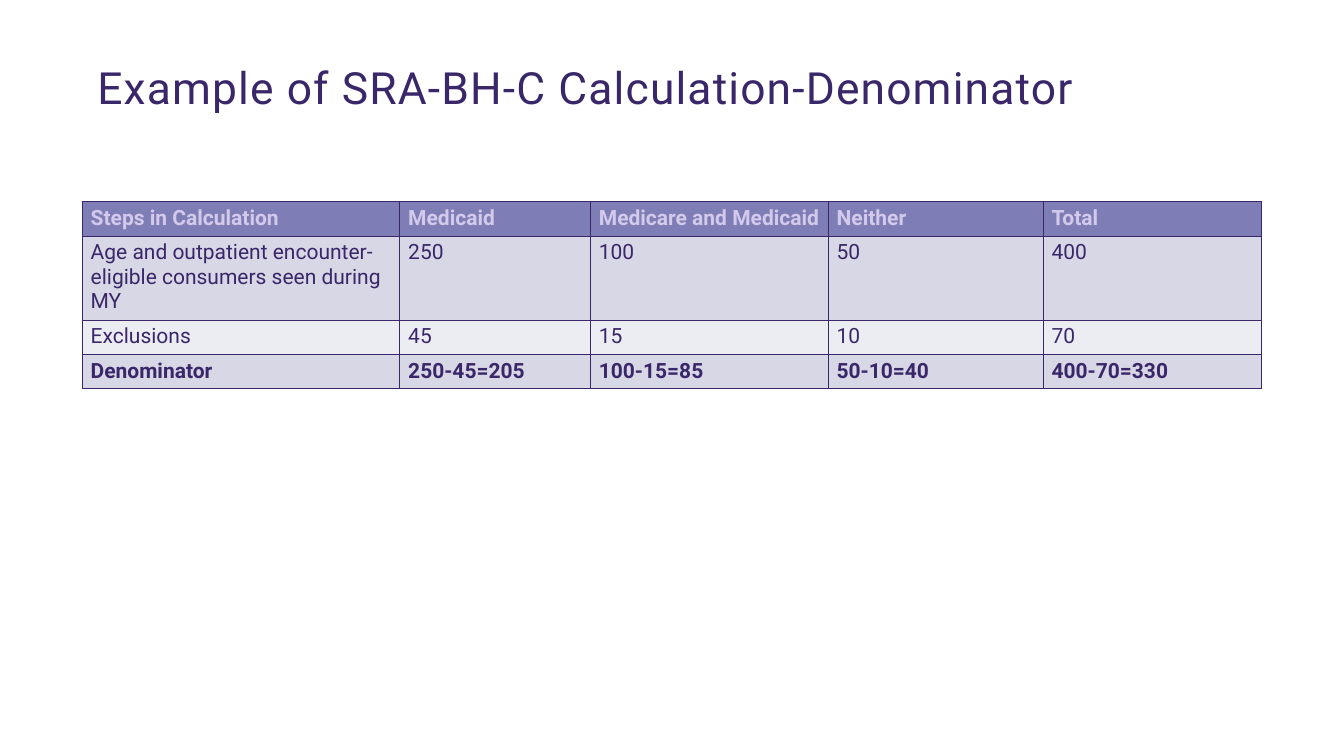
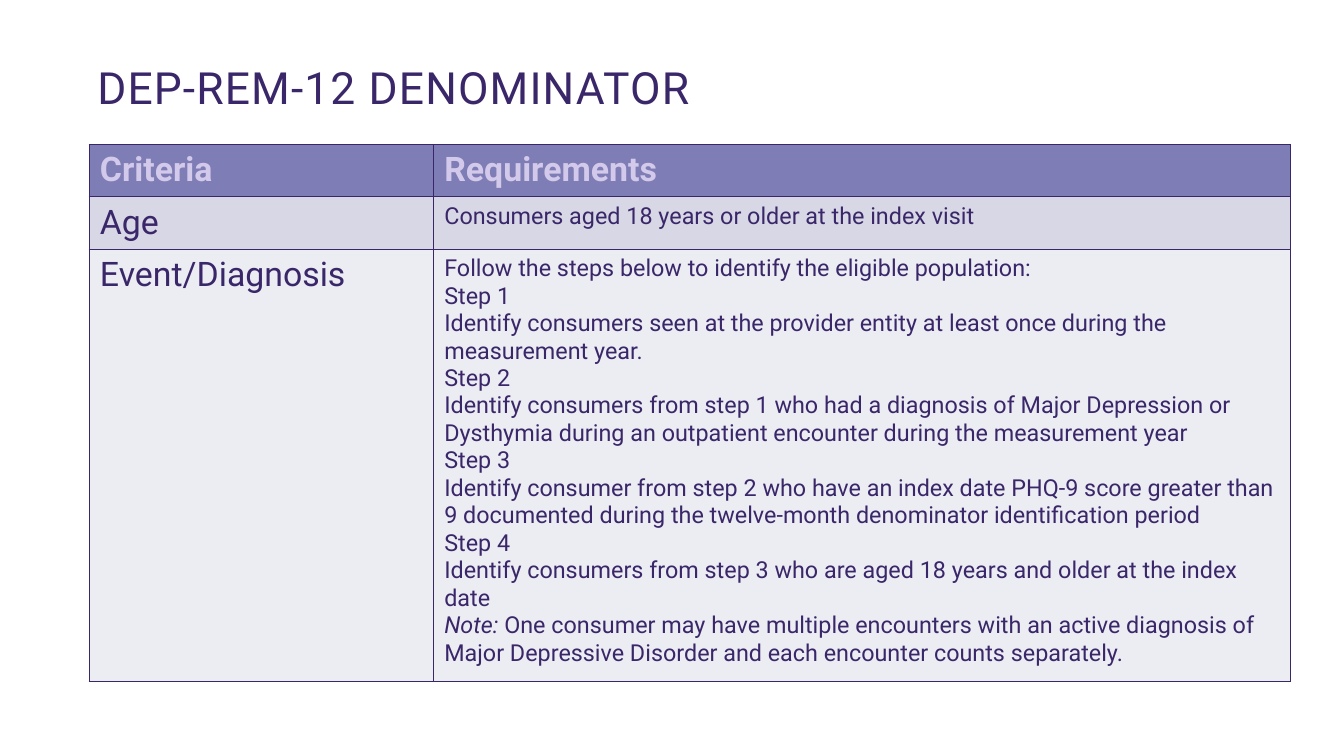
from dataclasses import dataclass

from lxml.etree import SubElement
from pptx import Presentation
from pptx.dml.color import RGBColor
from pptx.oxml.ns import qn
from pptx.slide import Slide
from pptx.table import _Cell as Cell
from pptx.util import Inches, Pt

FONT = "Roboto"
PURPLE = RGBColor(0x3A, 0x27, 0x69)
LILAC = RGBColor(0xD3, 0xCA, 0xEB)
HEADER_FILL = RGBColor(0x7E, 0x7D, 0xB5)
BAND_FILLS = (RGBColor(0xD8, 0xD7, 0xE5), RGBColor(0xEC, 0xEC, 0xF3))
NOTE_LABEL = "Note:"


@dataclass(frozen=True)
class TableSlide:
    title: str
    left: float
    top: float
    col_widths: tuple[float, ...]
    row_heights: tuple[float, ...]
    rows: tuple[tuple[str, ...], ...]
    label_size: int
    body_size: int
    margin_x: float
    margin_y: float
    bold_last_row: bool = False


SLIDES = (
    TableSlide(
        title="Example of SRA-BH-C Calculation-Denominator",
        left=0.98,
        top=2.4,
        col_widths=(3.78, 2.27, 2.83, 2.56, 2.6),
        row_heights=(0.41, 0.97, 0.41, 0.41),
        rows=(
            ("Steps in Calculation", "Medicaid", "Medicare and Medicaid", "Neither", "Total"),
            ("Age and outpatient encounter-eligible consumers seen during MY",
             "250", "100", "50", "400"),
            ("Exclusions", "45", "15", "10", "70"),
            ("Denominator", "250-45=205", "100-15=85", "50-10=40", "400-70=330"),
        ),
        label_size=18,
        body_size=18,
        margin_x=0.1,
        margin_y=0.05,
        bold_last_row=True,
    ),
    TableSlide(
        title="DEP-REM-12 DENOMINATOR",
        left=1.06,
        top=1.72,
        col_widths=(4.1, 10.2),
        row_heights=(0.6, 0.6, 5.03),
        rows=(
            ("Criteria", "Requirements"),
            ("Age", "Consumers aged 18 years or older at the index visit"),
            ("Event/Diagnosis", "\n".join((
                "Follow the steps below to identify the eligible population:",
                "Step 1",
                "Identify consumers seen at the provider entity at least once during the "
                "measurement year.",
                "Step 2",
                "Identify consumers from step 1 who had a diagnosis of Major Depression or "
                "Dysthymia during an outpatient encounter during the measurement year",
                "Step 3",
                "Identify consumer from step 2 who have an index date PHQ-9 score greater than "
                "9 documented during the twelve-month denominator identification period",
                "Step 4",
                "Identify consumers from step 3 who are aged 18 years and older at the index date",
                "Note: One consumer may have multiple encounters with an active diagnosis of "
                "Major Depressive Disorder and each encounter counts separately.",
            ))),
        ),
        label_size=29,
        body_size=20,
        margin_x=0.13,
        margin_y=0.07,
    ),
)


def add_title(s: Slide, text: str) -> None:
    tf = s.shapes.add_textbox(Inches(1.06), Inches(0.74), Inches(12), Inches(1.54)).text_frame
    tf.word_wrap = True
    p = tf.paragraphs[0]
    p.line_spacing = 0.9
    p.font.name, p.font.size = FONT, Pt(38)
    p.font.color.rgb = PURPLE
    r = p.add_run()
    r.text = text
    r._r.get_or_add_rPr().set("spc", "100")


def add_borders(cell: Cell) -> None:
    tc_pr = cell._tc.get_or_add_tcPr()
    for side in ("a:lnL", "a:lnR", "a:lnT", "a:lnB"):
        line = SubElement(tc_pr, qn(side), w=str(Pt(1)))
        fill = SubElement(line, qn("a:solidFill"))
        SubElement(fill, qn("a:srgbClr"), val=str(PURPLE))


def write_cell(cell: Cell, text: str, size: int, color: RGBColor, bold: bool) -> None:
    """Write one paragraph per line, with the note label in italics."""
    tf = cell.text_frame
    for i, line in enumerate(text.split("\n")):
        p = tf.add_paragraph() if i else tf.paragraphs[0]
        p.font.name, p.font.size, p.font.bold = FONT, Pt(size), bold
        p.font.color.rgb = color
        if line.startswith(NOTE_LABEL):
            label = p.add_run()
            label.text = NOTE_LABEL
            label.font.italic = True
        p.add_run().text = line.removeprefix(NOTE_LABEL)


def add_table(s: Slide, data: TableSlide) -> None:
    table = s.shapes.add_table(
        len(data.rows), len(data.col_widths), Inches(data.left), Inches(data.top),
        Inches(sum(data.col_widths)), Inches(sum(data.row_heights)),
    ).table
    table.first_row = table.horz_banding = False
    for column, width in zip(table.columns, data.col_widths):
        column.width = Inches(width)
    for i, (height, texts) in enumerate(zip(data.row_heights, data.rows)):
        table.rows[i].height = Inches(height)
        is_header = i == 0
        is_bold = is_header or (data.bold_last_row and i == len(data.rows) - 1)
        for j, text in enumerate(texts):
            cell = table.cell(i, j)
            cell.margin_left = cell.margin_right = Inches(data.margin_x)
            cell.margin_top = cell.margin_bottom = Inches(data.margin_y)
            add_borders(cell)
            cell.fill.solid()
            cell.fill.fore_color.rgb = HEADER_FILL if is_header else BAND_FILLS[(i - 1) % 2]
            size = data.label_size if is_header or j == 0 else data.body_size
            write_cell(cell, text, size, LILAC if is_header else PURPLE, is_bold)


def main() -> None:
    prs = Presentation()
    prs.slide_width, prs.slide_height = Inches(16), Inches(9)
    for data in SLIDES:
        s = prs.slides.add_slide(prs.slide_layouts[6])
        add_title(s, data.title)
        add_table(s, data)
    prs.save("out.pptx")


if __name__ == "__main__":
    main()
